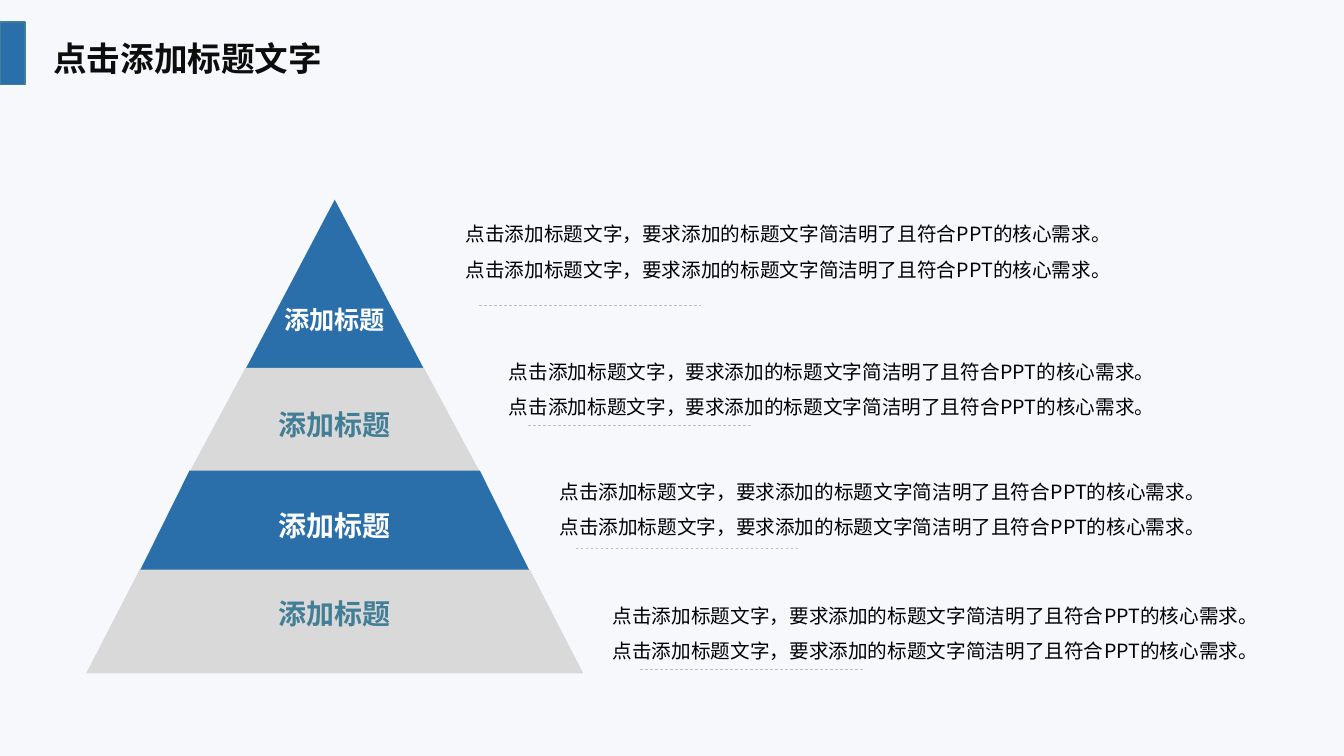
from lxml import etree
from pptx import Presentation
from pptx.dml.color import RGBColor
from pptx.enum import dml, shapes, text
from pptx.oxml import ns
from pptx.util import Pt

HEADING = "点击添加标题文字"
LABEL = "添加标题"
SENTENCE = "点击添加标题文字，要求添加的标题文字简洁明了且符合PPT的核心需求。"
FONT = "Noto Sans CJK SC"
COLORS = {
    "page": "F6F8FC", "blue": "2A6FAA", "gray": "D9D9D9", "teal": "427E96",
    "white": "FFFFFF", "rule": "BFBFBF", "body": "000000", "heading": "0D0D0D",
}
TIER_STYLES = [("blue", "white"), ("gray", "teal")]
TIERS = [
    {"band": (142.6, 128.2, 121.7), "slope": None, "label": (213.8, 18),
     "body": (327.6, 147.6), "rule": (342, 218.2)},
    {"band": (262.8, 206.6, 73.6), "slope": 0.537, "label": (287.3, 20),
     "body": (358.6, 245.5), "rule": (377.3, 303.8)},
    {"band": (336.2, 277.9, 71.1), "slope": 0.496, "label": (360, 20),
     "body": (394.6, 331.2), "rule": (411.1, 391.7)},
    {"band": (406.9, 355, 74), "slope": 0.515, "label": (422.6, 20),
     "body": (432.7, 419.8), "rule": (457.2, 478.1)},
]
AXIS = 239.1
LABEL_WIDTH = 111.6
BODY_SIZE = (465.1, 53.3)
RULE_WIDTH = 159


def rgb(color):
    return RGBColor.from_string(COLORS[color])


def add_block(slide, kind, left, top, width, height, color):
    block = slide.shapes.add_shape(kind, Pt(left), Pt(top), Pt(width), Pt(height))
    block.shadow.inherit = False
    block.fill.solid()
    block.fill.fore_color.rgb = rgb(color)
    block.line.fill.background()
    return block


def add_text(slide, words, left, top, width, height, size, color,
             bold=False, align=text.PP_ALIGN.LEFT, insets=(7.2, 3.6), spacing=1.0):
    frame = slide.shapes.add_textbox(Pt(left), Pt(top), Pt(width), Pt(height)).text_frame
    frame.word_wrap = True
    frame.auto_size = text.MSO_AUTO_SIZE.SHAPE_TO_FIT_TEXT
    frame.margin_left = frame.margin_right = Pt(insets[0])
    frame.margin_top = frame.margin_bottom = Pt(insets[1])
    paragraph = frame.paragraphs[0]
    paragraph.text = words
    paragraph.alignment = align
    paragraph.line_spacing = spacing
    font = paragraph.font
    font.name, font.size, font.bold = FONT, Pt(size), bold
    font.color.rgb = rgb(color)
    defaults = paragraph._p.pPr.find(ns.qn("a:defRPr"))
    etree.SubElement(defaults, ns.qn("a:ea"), typeface=FONT)


def add_rule(slide, left, y):
    rule = slide.shapes.add_connector(
        shapes.MSO_CONNECTOR.STRAIGHT, Pt(left), Pt(y), Pt(left + RULE_WIDTH), Pt(y))
    rule.line.color.rgb = rgb("rule")
    rule.line.width = Pt(0.5)
    rule.line.dash_style = dml.MSO_LINE.DASH
    etree.SubElement(rule._element.spPr, ns.qn("a:effectLst"))


def add_band(slide, tier, color):
    top, width, height = tier["band"]
    kind = shapes.MSO_SHAPE.TRAPEZOID if tier["slope"] else shapes.MSO_SHAPE.ISOSCELES_TRIANGLE
    band = add_block(slide, kind, AXIS - width / 2, top, width, height, color)
    if tier["slope"]:
        band.adjustments[0] = tier["slope"]


def main():
    deck = Presentation()
    deck.slide_width, deck.slide_height = Pt(960), Pt(540)
    slide = deck.slides.add_slide(deck.slide_layouts[6])
    slide.background.fill.solid()
    slide.background.fill.fore_color.rgb = rgb("page")

    for index, tier in enumerate(TIERS):
        band_color, label_color = TIER_STYLES[index % 2]
        add_band(slide, tier, band_color)
        label_top, label_size = tier["label"]
        add_text(slide, LABEL, AXIS - LABEL_WIDTH / 2, label_top, LABEL_WIDTH,
                 label_size * 1.6, label_size, label_color, True, text.PP_ALIGN.CENTER)
        add_rule(slide, *tier["rule"])
        add_text(slide, SENTENCE * 2, *tier["body"], *BODY_SIZE, 14, "body",
                 insets=(5, 2.9), spacing=1.5)

    marker = add_block(slide, shapes.MSO_SHAPE.RECTANGLE, 0, 15.8, 18, 44.6, "blue")
    marker.line.color.rgb = rgb("teal")
    marker.line.width = Pt(1)
    add_text(slide, HEADING, 31, 23.8, 288.7, 36, 24, "heading", True)

    deck.save("out.pptx")


if __name__ == "__main__":
    main()
